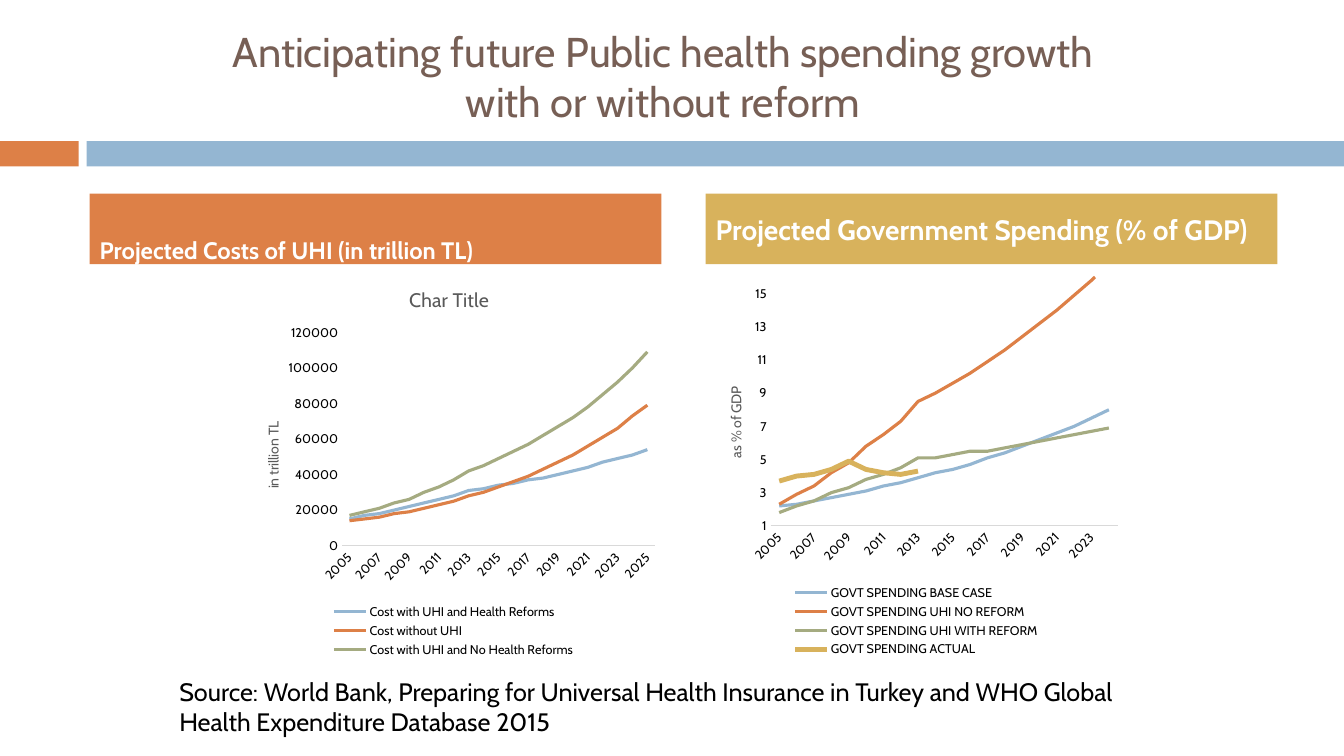
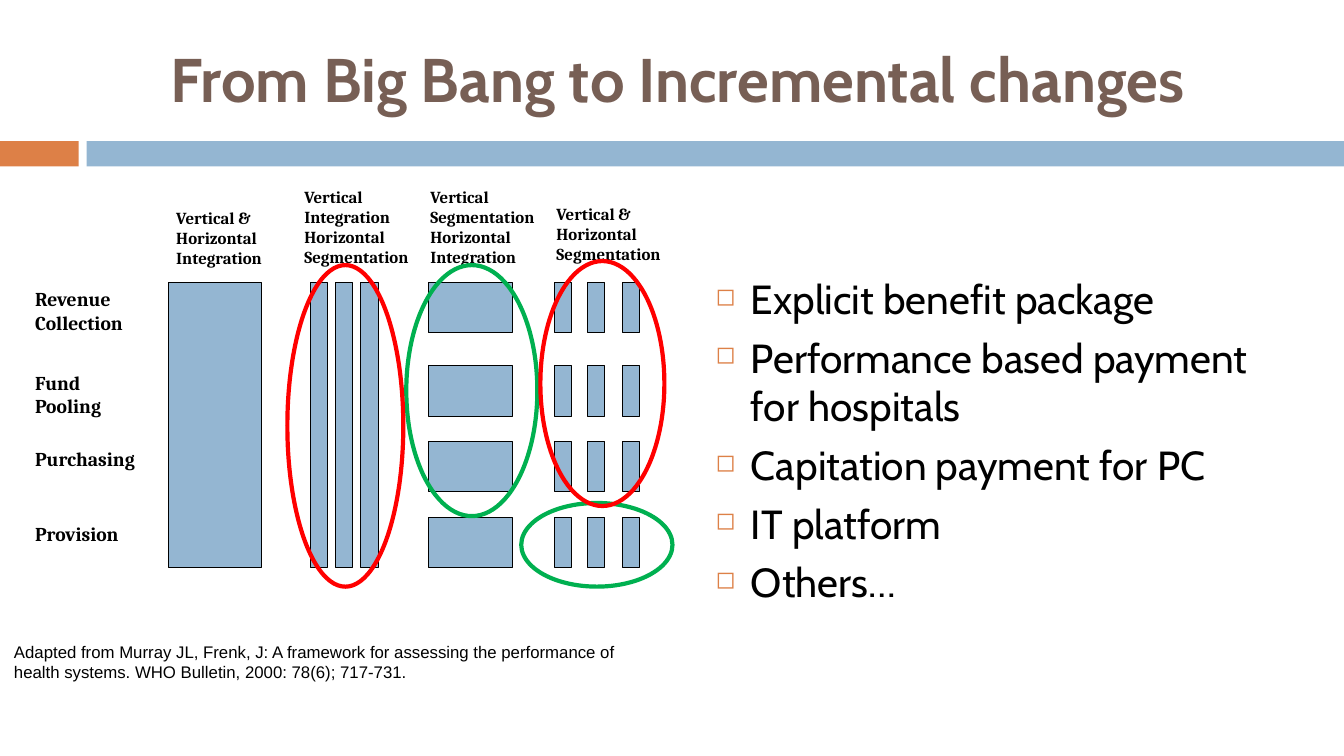
from dataclasses import dataclass
from itertools import product

from lxml.etree import SubElement
from pptx import Presentation
from pptx.chart.data import CategoryChartData
from pptx.dml.color import RGBColor
from pptx.enum.chart import XL_CHART_TYPE, XL_LEGEND_POSITION, XL_TICK_MARK
from pptx.enum.shapes import MSO_SHAPE
from pptx.enum.text import MSO_ANCHOR, PP_ALIGN
from pptx.oxml.ns import qn
from pptx.util import Emu, Pt

EMU_PER_PX = 9144


def px(length):
    """Turn px, a hundred to the inch, into EMU."""
    return Emu(length * EMU_PER_PX)


@dataclass(frozen=True)
class Theme:
    """Colours, fonts and type sizes of the deck."""
    orange: str = "DD8047"
    blue: str = "94B6D2"
    gold: str = "D8B25C"
    olive: str = "A5AB81"
    brown: str = "775F55"
    black: str = "000000"
    white: str = "FFFFFF"
    grey: str = "595959"
    pale: str = "D9D9D9"
    red: str = "FF0000"
    green: str = "00B050"
    sans: str = "Cabin"
    serif: str = "Cambria"
    plain: str = "Arial"
    title: float = 44
    long_title: float = 29.7
    body: float = 29
    header: float = 20
    small_header: float = 17
    source: float = 18
    row_label: float = 14
    note: float = 12
    chart_title: float = 14
    chart: float = 10
    axis: float = 9


THEME = Theme()


def set_font(font, size, colour, name=THEME.sans, bold=False):
    """Give a font its size, colour, face and weight."""
    font.size, font.name, font.bold = Pt(size), name, bold
    font.color.rgb = RGBColor.from_string(colour)


def set_layout(chart, query, **fractions):
    """Place a chart part at fractions of the chart's size."""
    part = chart.element.xpath(query)[0]
    for old in part.findall(qn("c:layout")):
        part.remove(old)
    layout = SubElement(part, qn("c:layout"))
    manual = SubElement(layout, qn("c:manualLayout"))
    if part.tag == qn("c:plotArea"):
        SubElement(manual, qn("c:layoutTarget")).set("val", "inner")
    for mode in ("xMode", "yMode"):
        SubElement(manual, qn(f"c:{mode}")).set("val", "edge")
    for key, value in fractions.items():
        SubElement(manual, qn(f"c:{key}")).set("val", str(value))
    part.insert(0 if part.tag == qn("c:plotArea") else 1, layout)


class Board:
    """Hold the deck, its style and the current slide."""

    def __init__(self, theme):
        """Open an empty wide deck."""
        self.theme = theme
        self.deck = Presentation()
        self.deck.slide_width, self.deck.slide_height = px(1333), px(750)
        self.slide = None

    def new_slide(self):
        """Start a slide with the two bands."""
        self.slide = self.deck.slides.add_slide(self.deck.slide_layouts[6])
        self.shape((0, 140, 78, 25), self.theme.orange)
        self.shape((86, 140, 1247, 25), self.theme.blue)

    def shape(self, place, fill=None, line=None, weight=0.75, kind=MSO_SHAPE.RECTANGLE):
        """Add a preset shape."""
        shape = self.slide.shapes.add_shape(kind, *map(px, place))
        shape.shadow.inherit = False
        if fill:
            shape.fill.solid()
            shape.fill.fore_color.rgb = RGBColor.from_string(fill)
        else:
            shape.fill.background()
        if line:
            shape.line.color.rgb = RGBColor.from_string(line)
            shape.line.width = Pt(weight)
        else:
            shape.line.fill.background()
        return shape

    def ring(self, place, colour):
        """Add an open ellipse."""
        self.shape(place, line=colour, weight=3, kind=MSO_SHAPE.OVAL)

    def fill_text(self, box, text, size, colour, name, bold, align, anchor):
        """Fill a box with text, one paragraph a line."""
        frame = box.text_frame
        frame.word_wrap = True
        frame.vertical_anchor = anchor
        frame.text = text
        for para in frame.paragraphs:
            para.alignment = align
            for span in para.runs:
                set_font(span.font, size, colour, name, bold)
        return frame

    def text(self, place, text, size, colour=THEME.black, name=THEME.sans, bold=False,
             align=PP_ALIGN.LEFT, anchor=MSO_ANCHOR.TOP):
        """Add a text box."""
        box = self.slide.shapes.add_textbox(*map(px, place))
        return self.fill_text(box, text, size, colour, name, bold, align, anchor)

    def title(self, place, text, size, bold=False):
        """Add the slide title."""
        self.text(place, text, size, self.theme.brown, bold=bold,
                  align=PP_ALIGN.CENTER, anchor=MSO_ANCHOR.MIDDLE)

    def header(self, left, text, size, fill, anchor):
        """Add a filled heading above a chart."""
        box = self.shape((left, 192, 567, 70), fill)
        frame = self.fill_text(box, text, size, self.theme.white, self.theme.sans, True,
                               PP_ALIGN.LEFT, anchor)
        frame.margin_bottom = 0 if anchor == MSO_ANCHOR.BOTTOM else frame.margin_top

    def bullets(self, place, items):
        """Add a list with small square bullets."""
        frame = self.text(place, "\n".join(items), self.theme.body)
        for para in frame.paragraphs:
            para.space_before = Pt(7)
            props = para._p.get_or_add_pPr()
            props.set("marL", str(px(35)))
            props.set("indent", str(px(-35)))
            colour = SubElement(props, qn("a:buClr"))
            SubElement(colour, qn("a:srgbClr")).set("val", self.theme.orange)
            SubElement(props, qn("a:buSzPct")).set("val", "60000")
            SubElement(props, qn("a:buChar")).set("char", "◻")

    def line_chart(self, left, years, series, axis_title, title=None):
        """Add a line chart; each series is a name, colour, width and values."""
        theme = self.theme
        data = CategoryChartData()
        data.categories = [str(year) for year in years]
        for name, _, _, values in series:
            data.add_series(name, values)
        chart = self.slide.shapes.add_chart(
            XL_CHART_TYPE.LINE, *map(px, (left, 267, 425, 392)), data).chart
        set_font(chart.font, theme.chart, theme.black)
        chart.has_title = bool(title)
        if title:
            frame = chart.chart_title.text_frame
            frame.text = title
            set_font(frame.paragraphs[0].runs[0].font, theme.chart_title, theme.grey)
        chart.has_legend = True
        chart.legend.position = XL_LEGEND_POSITION.BOTTOM
        chart.legend.include_in_layout = False
        set_font(chart.legend.font, theme.axis, theme.black)
        plot = chart.plots[0]
        plot.vary_by_categories = False
        for line, (_, colour, weight, _) in zip(plot.series, series):
            line.smooth = False
            line.format.line.color.rgb = RGBColor.from_string(colour)
            line.format.line.width = Pt(weight)
        for axis in (chart.category_axis, chart.value_axis):
            axis.has_major_gridlines = False
            axis.major_tick_mark = axis.minor_tick_mark = XL_TICK_MARK.NONE
            set_font(axis.tick_labels.font, theme.axis, theme.black)
        chart.category_axis.format.line.color.rgb = RGBColor.from_string(theme.pale)
        chart.category_axis.format.line.width = Pt(0.75)
        chart.element.xpath("//c:catAx/c:txPr/a:bodyPr")[0].set("rot", "-2700000")
        chart.value_axis.format.line.fill.background()
        frame = chart.value_axis.axis_title.text_frame
        frame.text = axis_title
        set_font(frame.paragraphs[0].runs[0].font, theme.chart, theme.grey)
        return chart


def spending_slide(board):
    """Build the slide with the two spending projections."""
    theme = board.theme
    board.new_slide()
    board.header(89, "Projected Costs of UHI (in trillion TL)", theme.small_header,
                 theme.orange, MSO_ANCHOR.BOTTOM)
    board.header(700, "Projected Government Spending (% of GDP)", theme.header,
                 theme.gold, MSO_ANCHOR.MIDDLE)
    board.text((168, 666, 980, 71),
               "Source: World Bank, Preparing for Universal Health Insurance in Turkey "
               "and WHO Global Health Expenditure Database 2015", theme.source)
    share = board.line_chart(692, range(2005, 2025), [
        ("GOVT SPENDING BASE CASE", theme.blue, 2.25,
         [2.2, 2.3, 2.5, 2.7, 2.9, 3.1, 3.4, 3.6, 3.9, 4.2,
          4.4, 4.7, 5.1, 5.4, 5.8, 6.2, 6.6, 7, 7.5, 8]),
        ("GOVT SPENDING UHI NO REFORM", theme.orange, 2.25,
         [2.3, 2.9, 3.4, 4.2, 4.8, 5.8, 6.5, 7.3, 8.5, 9,
          9.6, 10.2, 10.9, 11.6, 12.4, 13.2, 14, 14.9, 15.8, 16.8]),
        ("GOVT SPENDING UHI WITH REFORM", theme.olive, 2.25,
         [1.8, 2.2, 2.5, 3, 3.3, 3.8, 4.1, 4.5, 5.1, 5.1,
          5.3, 5.5, 5.5, 5.7, 5.9, 6.1, 6.3, 6.5, 6.7, 6.9]),
        ("GOVT SPENDING ACTUAL", theme.gold, 3.5,
         [3.7, 4, 4.1, 4.4, 4.9, 4.4, 4.2, 4.1, 4.3] + [None] * 11),
    ], "as % of GDP")
    axis = share.value_axis
    axis.minimum_scale, axis.maximum_scale, axis.major_unit = 1, 16, 2
    set_layout(share, "//c:plotArea", x=0.17, y=0.02, w=0.81, h=0.63)
    set_layout(share, "//c:legend", x=0.21, y=0.79, w=0.6, h=0.2)
    set_layout(share, "//c:valAx/c:title", x=0.06, y=0.29)
    cost = board.line_chart(233, range(2005, 2026), [
        ("Cost with UHI and Health Reforms", theme.blue, 2.25,
         [15000, 17000, 18000, 20000, 22000, 24000, 26000, 28000, 31000, 32000, 34000,
          35000, 37000, 38000, 40000, 42000, 44000, 47000, 49000, 51000, 54000]),
        ("Cost without UHI", theme.orange, 2.25,
         [14000, 15000, 16000, 18000, 19000, 21000, 23000, 25000, 28000, 30000, 33000,
          36000, 39000, 43000, 47000, 51000, 56000, 61000, 66000, 73000, 79000]),
        ("Cost with UHI and No Health Reforms", theme.olive, 2.25,
         [17000, 19000, 21000, 24000, 26000, 30000, 33000, 37000, 42000, 45000, 49000,
          53000, 57000, 62000, 67000, 72000, 78000, 85000, 92000, 100000, 109000]),
    ], "in trillion TL", "Char Title")
    set_layout(cost, "//c:plotArea", x=0.25, y=0.16, w=0.73, h=0.54)
    set_layout(cost, "//c:legend", x=0.21, y=0.84, w=0.6, h=0.15)
    set_layout(cost, "//c:valAx/c:title", x=0.06, y=0.38)
    board.title((212, 28, 892, 95),
                "Anticipating future Public health spending growth with or without reform",
                theme.long_title)


def changes_slide(board):
    """Build the slide with the integration grid and the list of changes."""
    theme = board.theme
    board.new_slide()
    board.title((78, 30, 1189, 95), "From Big Bang to Incremental changes",
                theme.title, True)
    board.bullets((700, 267, 567, 392), [
        "Explicit benefit package", "Performance based payment for hospitals",
        "Capitation payment for PC", "IT platform", "Others…"])
    rows = {280: "Revenue\nCollection", 363: "Fund\nPooling",
            438: "Purchasing", 513: "Provision"}
    blocks = [
        ([167], 92, [280], 283),
        ([308, 333, 358], 17, [280], 283),
        ([425], 83, rows, 50),
        ([550, 583, 617], 17, rows, 50),
    ]
    for lefts, width, tops, height in blocks:
        for left, top in product(lefts, tops):
            board.shape((left, top, width, height), theme.blue, theme.black)
    columns = [
        (165, 201, "Vertical &\nHorizontal\nIntegration"),
        (292, 180, "Vertical\nIntegration\nHorizontal\nSegmentation"),
        (417, 180, "Vertical\nSegmentation\nHorizontal\nIntegration"),
        (542, 197, "Vertical &\nHorizontal\nSegmentation"),
    ]
    for left, top, label in columns:
        board.text((left, top, 130, 91), label, theme.note, name=theme.serif, bold=True)
    for top, label in rows.items():
        board.text((25, top, 130, 57), label, theme.row_label, name=theme.serif, bold=True)
    board.text((4, 632, 664, 50),
               "Adapted from Murray JL, Frenk, J: A framework for assessing the performance "
               "of health systems. WHO Bulletin, 2000: 78(6); 717-731.",
               theme.note, name=theme.plain)
    board.ring((403, 263, 130, 249), theme.green)
    board.ring((517, 499, 150, 83), theme.green)
    board.ring((285, 263, 115, 319), theme.red)
    board.ring((536, 259, 123, 243), theme.red)


def main():
    """Build and save the deck."""
    board = Board(THEME)
    spending_slide(board)
    changes_slide(board)
    board.deck.save("out.pptx")


if __name__ == "__main__":
    main()
